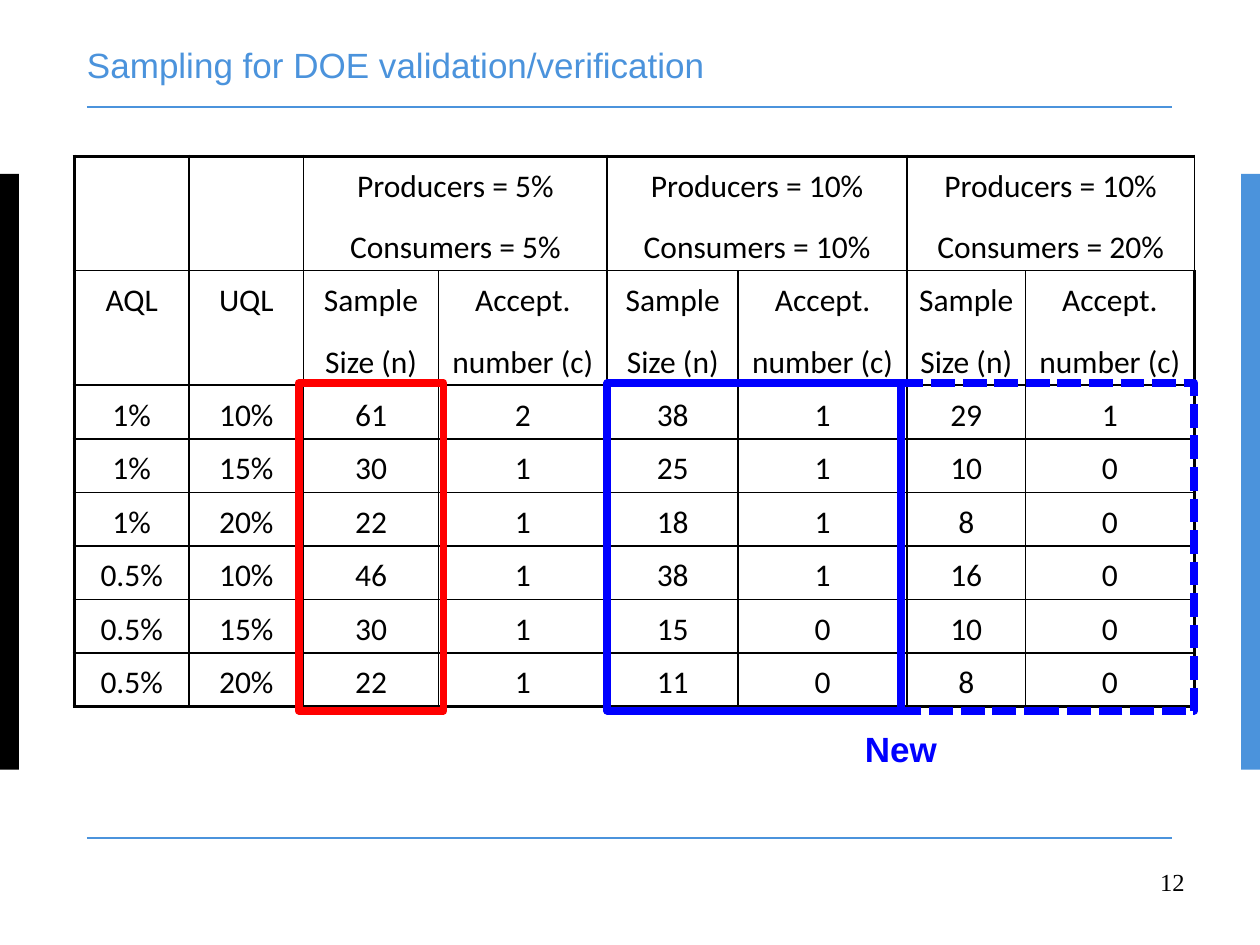
from dataclasses import dataclass

from lxml import etree
from pptx import Presentation
from pptx.dml.color import RGBColor
from pptx.enum.dml import MSO_LINE
from pptx.enum.shapes import MSO_CONNECTOR, MSO_SHAPE
from pptx.enum.text import MSO_ANCHOR, PP_ALIGN
from pptx.oxml.ns import qn
from pptx.util import Inches, Pt

LEFT, CENTER, RIGHT = PP_ALIGN.LEFT, PP_ALIGN.CENTER, PP_ALIGN.RIGHT
TOP, MIDDLE = MSO_ANCHOR.TOP, MSO_ANCHOR.MIDDLE
RECTANGLE = MSO_SHAPE.RECTANGLE
STRAIGHT = MSO_CONNECTOR.STRAIGHT
SHORT_DASH = MSO_LINE.SQUARE_DOT


@dataclass(frozen=True)
class Theme:
    black: str = "000000"
    sky: str = "4B93DC"
    red: str = "FF0000"
    blue: str = "0000FF"
    heading_font: str = "Arial"
    table_font: str = "Calibri"
    number_font: str = "Times New Roman"
    heading_size: int = 20
    table_size: int = 18
    number_size: int = 14
    rule: float = 1
    frame: float = 2.25
    highlight: float = 4.5


THEME = Theme()

RISKS = [(5, 5), (10, 10), (10, 20)]
PLAN_HEADS = ["Sample\nSize (n)", "Accept.\nnumber (c)"]
PLANS = [
    ["1%", "10%", 61, 2, 38, 1, 29, 1],
    ["1%", "15%", 30, 1, 25, 1, 10, 0],
    ["1%", "20%", 22, 1, 18, 1, 8, 0],
    ["0.5%", "10%", 46, 1, 38, 1, 16, 0],
    ["0.5%", "15%", 30, 1, 15, 0, 10, 0],
    ["0.5%", "20%", 22, 1, 11, 0, 8, 0],
]
COLUMN_WIDTHS = [0.91, 0.91, 1.07, 1.34, 1.04, 1.34, 0.94, 1.34]
ROW_HEIGHTS = [0.76] * 2 + [0.34] * 5 + [0.39]


def style_font(paragraph, name, size, color, bold=False):
    paragraph.font.name = name
    paragraph.font.size = Pt(size)
    paragraph.font.bold = bold
    paragraph.font.color.rgb = RGBColor.from_string(color)


def add_label(slide, box, text, font, size, color, align, anchor, bold=False, flush=True):
    frame = slide.shapes.add_textbox(*map(Inches, box)).text_frame
    frame.word_wrap = True
    frame.vertical_anchor = anchor
    if flush:
        frame.margin_left = frame.margin_top = frame.margin_right = frame.margin_bottom = 0
    paragraph = frame.paragraphs[0]
    paragraph.text = text
    paragraph.alignment = align
    style_font(paragraph, font, size, color, bold)


def add_side_bars(slide, box, width):
    left, top, span, height = box
    for bar_left, color in ((left, THEME.black), (left + span - width, THEME.sky)):
        bar = slide.shapes.add_shape(
            RECTANGLE, Inches(bar_left), Inches(top), Inches(width), Inches(height))
        bar.shadow.inherit = False
        bar.fill.solid()
        bar.fill.fore_color.rgb = RGBColor.from_string(color)
        bar.line.fill.background()


def add_rules(slide, box):
    left, top, width, height = box
    for y in (top, top + height):
        rule = slide.shapes.add_connector(
            STRAIGHT, Inches(left), Inches(y), Inches(left + width), Inches(y))
        rule.line.color.rgb = RGBColor.from_string(THEME.sky)
        rule.line.width = Pt(THEME.rule)
        etree.SubElement(rule._element.spPr, qn("a:effectLst"))


def set_borders(cell, outer_sides):
    properties = cell._tc.get_or_add_tcPr()
    for index, (side, outer) in enumerate(outer_sides.items()):
        width = THEME.frame if outer else THEME.rule
        border = etree.Element(qn(f"a:ln{side}"), w=str(Pt(width)))
        fill = etree.SubElement(border, qn("a:solidFill"))
        etree.SubElement(fill, qn("a:srgbClr"), val=THEME.black)
        properties.insert(index, border)


def fill_cell(cell, text):
    cell.margin_left = cell.margin_top = cell.margin_right = cell.margin_bottom = Inches(0.04)
    cell.text = str(text)
    for paragraph in cell.text_frame.paragraphs:
        paragraph.alignment = CENTER
        paragraph.line_spacing = 1.15
        paragraph.space_after = Pt(10)
        style_font(paragraph, THEME.table_font, THEME.table_size, THEME.black)


def add_sampling_table(slide, box):
    risk_row = ["", ""]
    for producers, consumers in RISKS:
        risk_row += [f"Producers = {producers}%\nConsumers = {consumers}%", ""]
    rows = [risk_row, ["AQL", "UQL"] + PLAN_HEADS * len(RISKS)] + PLANS
    last_row, last_column = len(rows) - 1, len(COLUMN_WIDTHS) - 1
    table = slide.shapes.add_table(len(rows), len(COLUMN_WIDTHS), *map(Inches, box)).table
    table.first_row = table.horz_banding = False
    for column, width in zip(table.columns, COLUMN_WIDTHS):
        column.width = Inches(width)
    for row, height in zip(table.rows, ROW_HEIGHTS):
        row.height = Inches(height)
    for r, values in enumerate(rows):
        for c, value in enumerate(values):
            cell = table.cell(r, c)
            fill_cell(cell, value)
            cell.fill.background()
            set_borders(cell, {"L": c == 0, "R": c == last_column,
                               "T": r == 0, "B": r == last_row})
    for c in range(2, last_column, 2):
        table.cell(0, c).merge(table.cell(0, c + 1))


def add_highlight(slide, box, color, dash=None):
    highlight = slide.shapes.add_shape(RECTANGLE, *map(Inches, box))
    highlight.shadow.inherit = False
    highlight.fill.background()
    highlight.line.color.rgb = RGBColor.from_string(color)
    highlight.line.width = Pt(THEME.highlight)
    if dash:
        highlight.line.dash_style = dash


def add_new_plans(slide, box):
    left, top, width, height = box
    half = width / 2
    label_width = 1
    add_highlight(slide, (left, top, half, height), THEME.blue)
    add_label(slide, (left + half - label_width / 2, top + height + 0.05, label_width, 0.5),
              "New", THEME.heading_font, THEME.heading_size, THEME.blue,
              CENTER, MIDDLE, bold=True)
    add_highlight(slide, (left + half, top, half, height), THEME.blue, SHORT_DASH)


def main():
    presentation = Presentation()
    presentation.slide_width = Inches(10)
    presentation.slide_height = Inches(7.5)
    slide = presentation.slides.add_slide(presentation.slide_layouts[6])
    add_side_bars(slide, (0, 1.38, 10, 4.73), 0.15)
    add_rules(slide, (0.69, 0.85, 8.61, 5.8))
    add_label(slide, (7.17, 6.83, 2.33, 0.52), "12", THEME.number_font,
              THEME.number_size, THEME.black, RIGHT, TOP, flush=False)
    add_label(slide, (0.69, 0.34, 8.61, 0.34), "Sampling for DOE validation/verification",
              THEME.heading_font, THEME.heading_size, THEME.sky, LEFT, MIDDLE)
    add_sampling_table(slide, (0.59, 1.24, 8.9, 4.36))
    add_highlight(slide, (2.37, 3.04, 1.15, 2.6), THEME.red)
    add_new_plans(slide, (4.82, 3.04, 4.66, 2.6))
    presentation.save("out.pptx")


if __name__ == "__main__":
    main()
